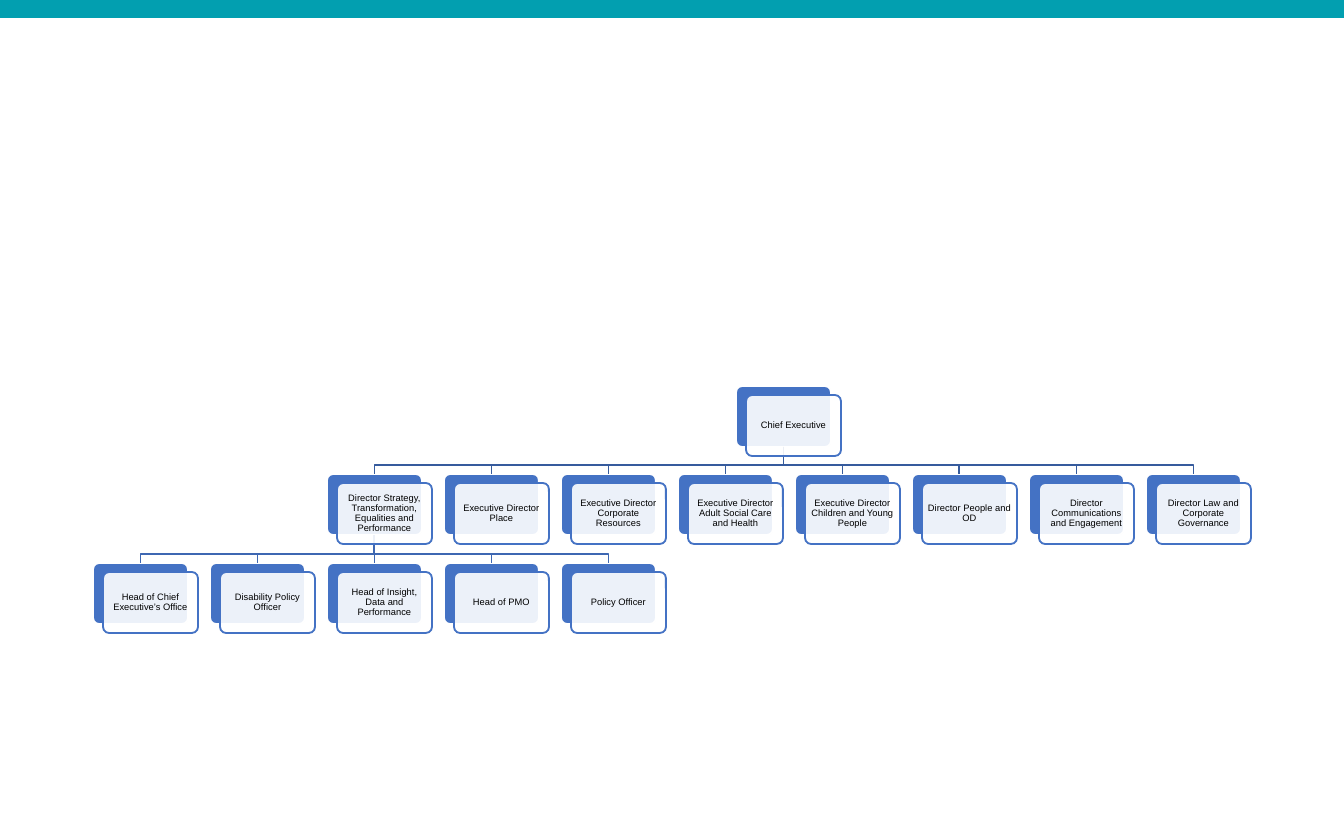
import pptx
import pptx.util
import pptx.dml.color
import pptx.enum.shapes
import pptx.enum.text
import pptx.oxml.ns
from lxml import etree

SCALE = 914400 / 134.4  # EMU in one px
WIDE, HIGH = 95, 61     # box size
LEFT, TOP = 93, 386     # first column and row
STEP, DROP = 117, 88.5  # column and row pitch
SHIFT_X, SHIFT_Y = 10, 9  # card against plate
BUS = 9                 # bus height above the lower row

SHAPE = pptx.enum.shapes.MSO_SHAPE


def emu(px):
    return pptx.util.Emu(round(px * SCALE))


def color(code):
    return pptx.dml.color.RGBColor.from_string(code)


class Chart:
    font, size, ink = "Arial", 5, "000000"
    blue, white = "4472C4", "FFFFFF"

    def __init__(self, slide):
        self.slide = slide

    def box(self, kind, x, y, w, h, fill, line=None):
        shape = self.slide.shapes.add_shape(kind, emu(x), emu(y), emu(w), emu(h))
        shape.shadow.inherit = False
        shape.fill.solid()
        shape.fill.fore_color.rgb = color(fill)
        if line:
            shape.adjustments[0] = 0.1
            self.stroke(shape, line)
        else:
            shape.line.fill.background()
        return shape

    def stroke(self, shape, code):
        shape.line.color.rgb = color(code)
        shape.line.width = pptx.util.Pt(1)

    def plate(self, col, row):
        x, y = int(LEFT + STEP * col), int(TOP + DROP * row)
        return self.box(SHAPE.ROUNDED_RECTANGLE, x, y, WIDE, HIGH, self.blue, self.white)

    def card(self, col, row, text):
        x, y = int(LEFT + STEP * col) + SHIFT_X, int(TOP + DROP * row) + SHIFT_Y
        shape = self.box(SHAPE.ROUNDED_RECTANGLE, x, y, WIDE, HIGH, self.white, self.blue)
        # White fill at 90 % opacity
        tone = shape.fill._xPr.find(".//" + pptx.oxml.ns.qn("a:srgbClr"))
        etree.SubElement(tone, pptx.oxml.ns.qn("a:alpha"), val="90000")
        frame = shape.text_frame
        frame.word_wrap = True
        frame.vertical_anchor = pptx.enum.text.MSO_ANCHOR.MIDDLE
        frame.margin_left = frame.margin_right = emu(2)
        frame.margin_top = frame.margin_bottom = emu(2)
        frame.text = text
        para = frame.paragraphs[0]
        para.alignment = pptx.enum.text.PP_ALIGN.CENTER
        para.line_spacing = 0.9
        font = para.runs[0].font
        font.name, font.size = self.font, pptx.util.Pt(self.size)
        font.color.rgb = color(self.ink)

    def link(self, upper, lower, code):
        start = upper.left + upper.width // 2, upper.top + upper.height
        end = lower.left + lower.width // 2, lower.top
        if start[0] == end[0]:
            line = self.slide.shapes.add_connector(
                pptx.enum.shapes.MSO_CONNECTOR.STRAIGHT, *start, *end)
            line.begin_connect(upper, 2)
            line.end_connect(lower, 0)
            etree.SubElement(line._element.spPr, pptx.oxml.ns.qn("a:effectLst"))
        else:
            bus = end[1] - emu(BUS)
            path = self.slide.shapes.build_freeform(*start)
            path.add_line_segments([(start[0], bus), (end[0], bus), end], close=False)
            line = path.convert_to_shape()
            line.shadow.inherit = False
            line.fill.background()
        self.stroke(line, code)


def main():
    deck = pptx.Presentation()
    deck.slide_width, deck.slide_height = emu(1344), emu(840)
    chart = Chart(deck.slides.add_slide(deck.slide_layouts[6]))

    # Top band
    chart.box(SHAPE.RECTANGLE, 0, 0, 1344, 18, "029FB0")

    # Each level: first column and roles
    levels = [
        (5.5, ["Chief Executive"]),
        (2, ["Director Strategy, Transformation, Equalities and Performance",
             "Executive Director Place",
             "Executive Director Corporate Resources",
             "Executive Director Adult Social Care and Health",
             "Executive Director Children and Young People",
             "Director People and OD",
             "Director Communications and Engagement",
             "Director Law and Corporate Governance"]),
        (0, ["Head of Chief Executive’s Office",
             "Disability Policy Officer",
             "Head of Insight, Data and Performance",
             "Head of PMO",
             "Policy Officer"]),
    ]
    seats = [(first + i, row, role)
             for row, (first, roles) in enumerate(levels)
             for i, role in enumerate(roles)]

    # Blue plates
    plates = [[], [], []]
    for col, row, role in seats:
        plates[row].append(chart.plate(col, row))

    # Links: the first role of each level leads the next one
    for row, code in enumerate(["365B9D", "3E67B2"]):
        for lower in plates[row + 1]:
            chart.link(plates[row][0], lower, code)

    # Cards with the roles
    for col, row, role in seats:
        chart.card(col, row, role)

    deck.save("out.pptx")


if __name__ == "__main__":
    main()
